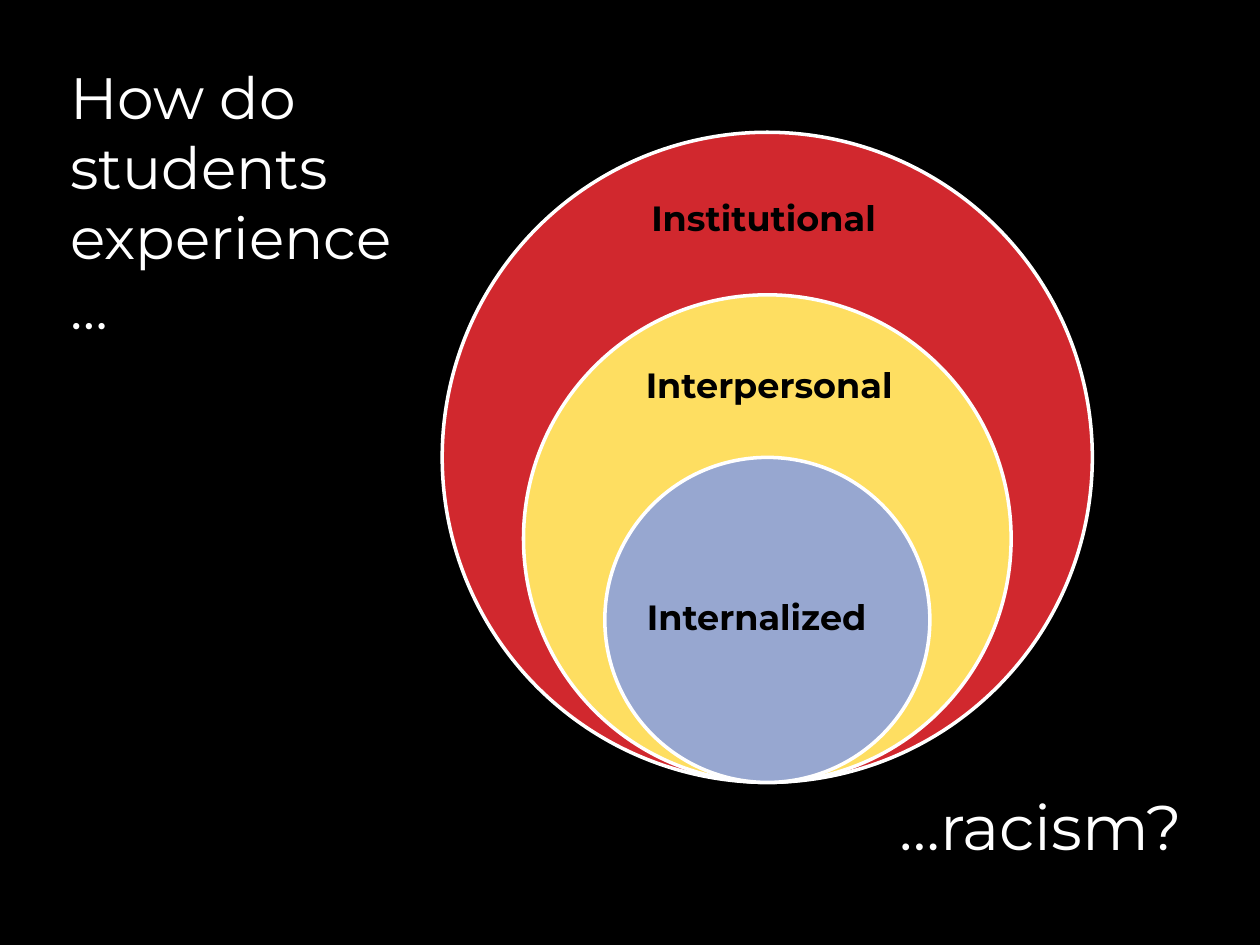
from dataclasses import dataclass

from pptx import Presentation
from pptx.dml.color import RGBColor
from pptx.enum.shapes import MSO_SHAPE as Shape
from pptx.enum.text import MSO_ANCHOR as Anchor, PP_ALIGN as Align
from pptx.util import Inches, Pt


@dataclass(frozen=True)
class Theme:
    font: str = "Montserrat"
    background: str = "000000"
    light: str = "FFFFFF"
    dark: str = "000000"
    red: str = "D1282E"
    yellow: str = "FEDE61"
    blue: str = "97A7D0"
    question_size: float = 33.3
    answer_size: float = 36
    label_size: float = 20
    outline: float = 2


THEME = Theme()

QUESTION = ("How do students experience…", (0.46, 0.44, 3.04, 1.92), THEME.question_size, Align.LEFT)
ANSWER = ("…racism?", (6.44, 6.2, 3.04, 0.81), THEME.answer_size, Align.RIGHT)

LEVELS = [
    ("Institutional ", THEME.red, (5.01, 1.36, 2.18, 0.77)),
    ("Interpersonal", THEME.yellow, (5.01, 2.71, 2.19, 0.72)),
    ("Internalized", THEME.blue, (5.01, 4.27, 1.99, 1.29)),
]
OUTER_DIAMETER = 5.16
DIAMETER_STEP = OUTER_DIAMETER / 4
CENTER_X = 6.09
CIRCLE_BOTTOM = 6.21


def color(value):
    return RGBColor.from_string(value)


def add_text(shapes, text, box, size, align, ink, bold=False):
    frame = shapes.add_textbox(*map(Inches, box)).text_frame
    frame.word_wrap = True
    paragraph = frame.paragraphs[0]
    paragraph.alignment = align
    run = paragraph.add_run()
    run.text = text
    run.font.name = THEME.font
    run.font.size = Pt(size)
    run.font.bold = bold
    run.font.color.rgb = color(ink)
    return frame


def add_circle(shapes, diameter, fill):
    left = CENTER_X - diameter / 2
    top = CIRCLE_BOTTOM - diameter
    circle = shapes.add_shape(Shape.OVAL, *map(Inches, (left, top, diameter, diameter)))
    circle.shadow.inherit = False
    circle.fill.solid()
    circle.fill.fore_color.rgb = color(fill)
    circle.line.color.rgb = color(THEME.light)
    circle.line.width = Pt(THEME.outline)


def add_label(shapes, text, box):
    frame = add_text(shapes, text, box, THEME.label_size, Align.CENTER, THEME.dark, bold=True)
    frame.vertical_anchor = Anchor.MIDDLE
    frame.margin_left = frame.margin_right = Inches(0.08)
    frame.margin_top = frame.margin_bottom = Inches(0.08)
    paragraph = frame.paragraphs[0]
    paragraph.line_spacing = 0.9
    paragraph.space_after = Pt(7)


def main():
    presentation = Presentation()
    presentation.slide_width = Inches(10)
    presentation.slide_height = Inches(7.5)
    slide = presentation.slides.add_slide(presentation.slide_layouts[6])
    slide.background.fill.solid()
    slide.background.fill.fore_color.rgb = color(THEME.background)

    add_text(slide.shapes, *QUESTION, THEME.light)
    diagram = slide.shapes.add_group_shape()
    for index, (label, fill, box) in enumerate(LEVELS):
        add_circle(diagram.shapes, OUTER_DIAMETER - index * DIAMETER_STEP, fill)
        add_label(diagram.shapes, label, box)
    add_text(slide.shapes, *ANSWER, THEME.light)

    presentation.save("out.pptx")


if __name__ == "__main__":
    main()
